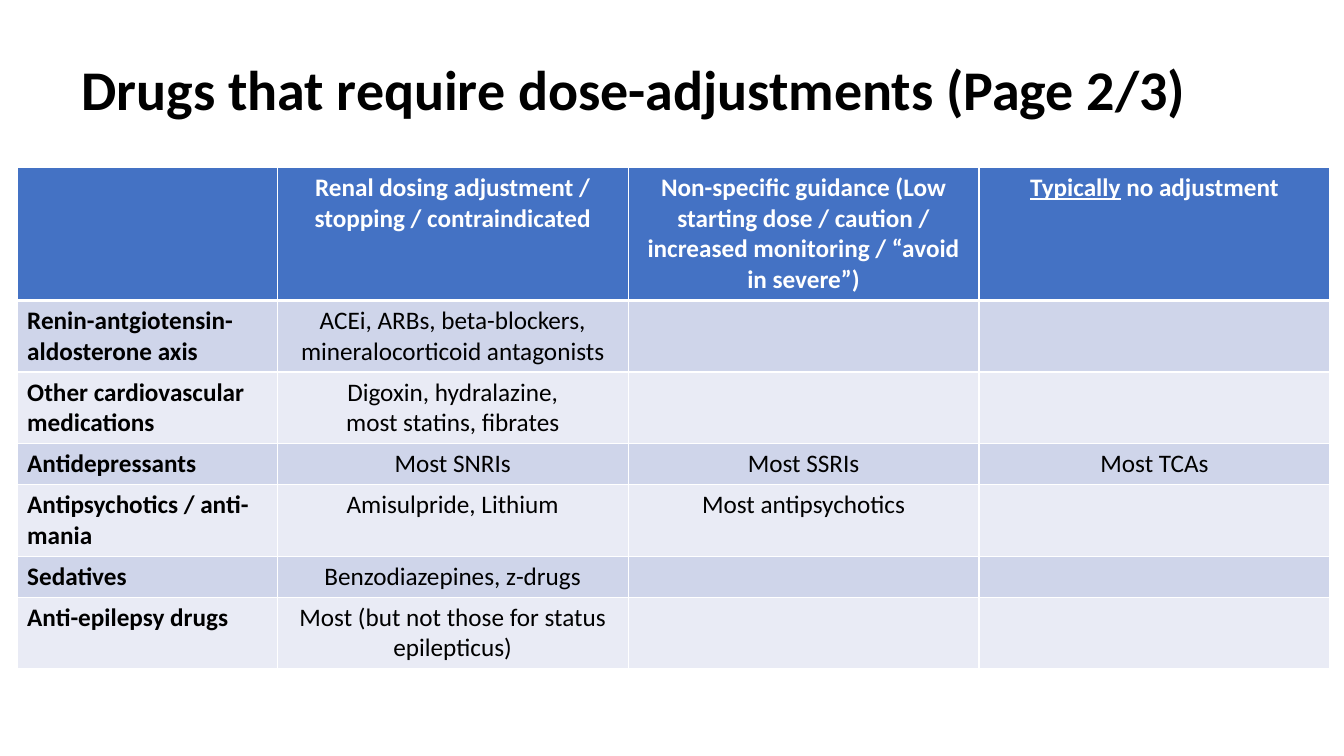
import lxml.etree
import pptx
import pptx.dml.color
import pptx.enum.text
import pptx.oxml.ns
import pptx.util

ALIGN = pptx.enum.text.PP_ALIGN
ANCHOR = pptx.enum.text.MSO_ANCHOR
WIDE, HIGH = 13.33, 7.5

HEAD = [
    "",
    "Renal dosing adjustment / stopping / contraindicated",
    "Non-specific guidance (Low starting dose / caution / "
    "increased monitoring / “avoid in severe”)",
    [("Typically", True), (" no adjustment", False)],
]
DRUGS = [
    ["Renin-antgiotensin-aldosterone axis",
     "ACEi, ARBs, beta-blockers, mineralocorticoid antagonists", "", ""],
    ["Other cardiovascular medications",
     "Digoxin, hydralazine,\nmost statins, fibrates", "", ""],
    ["Antidepressants", "Most SNRIs", "Most SSRIs", "Most TCAs"],
    ["Antipsychotics / anti-mania", "Amisulpride, Lithium",
     "Most antipsychotics", ""],
    ["Sedatives", "Benzodiazepines, z-drugs", "", ""],
    ["Anti-epilepsy drugs", "Most (but not those for status epilepticus)",
     "", ""],
]
COLS = [2.58, 3.48, 3.48, 3.48]
ROWS = [1.3, 0.7, 0.7, 0.4, 0.7, 0.4, 0.7]


def paint(code):
    return pptx.dml.color.RGBColor.from_string(code)


def write(frame, text, size=18, color="000000", bold=False,
          align=ALIGN.LEFT, lead=None):
    """Fill a frame; text is a string with line breaks or (words, underline) pairs."""
    lines = [[(line, False)] for line in text.split("\n")] \
        if isinstance(text, str) else [text]
    for i, line in enumerate(lines):
        para = frame.add_paragraph() if i else frame.paragraphs[0]
        para.alignment = align
        para.line_spacing = lead
        para.font.size = pptx.util.Pt(size)
        for words, under in line:
            if not words:
                continue
            run = para.add_run()
            run.text = words
            font = run.font
            font.name = "Calibri"
            font.size = pptx.util.Pt(size)
            font.bold = bold
            font.underline = under
            font.color.rgb = paint(color)


class Deck:
    head, bands, rule = "4472C4", ("CFD5EA", "E9EBF5"), "FFFFFF"

    def __init__(self):
        self.show = pptx.Presentation()
        self.show.slide_width = pptx.util.Inches(WIDE)
        self.show.slide_height = pptx.util.Inches(HIGH)
        self.slide = self.show.slides.add_slide(self.show.slide_layouts[5])

    def place(self, x, y, w, h):
        """Turn shares of the slide's size into lengths."""
        across, down = self.show.slide_width, self.show.slide_height
        return [round(v) for v in (x * across, y * down, w * across, h * down)]

    def title(self, text, *box):
        shape = self.slide.shapes.title
        shape.left, shape.top, shape.width, shape.height = self.place(*box)
        frame = shape.text_frame
        frame.auto_size = pptx.enum.text.MSO_AUTO_SIZE.NONE
        frame.vertical_anchor = ANCHOR.MIDDLE
        write(frame, text, size=40, bold=True, lead=0.9)

    def edge(self, cell, low):
        """Draw white borders, with the given weight for the bottom one."""
        props = cell._tc.get_or_add_tcPr()
        for side, weight in zip("LRTB", (1, 1, 1, low)):
            line = lxml.etree.SubElement(
                props, pptx.oxml.ns.qn("a:ln" + side),
                w=str(pptx.util.Pt(weight)))
            fill = lxml.etree.SubElement(line, pptx.oxml.ns.qn("a:solidFill"))
            lxml.etree.SubElement(
                fill, pptx.oxml.ns.qn("a:srgbClr"), val=self.rule)

    def table(self, data, cols, rows, *box):
        grid = self.slide.shapes.add_table(
            len(data), len(cols), *self.place(*box)).table
        for col, width in zip(grid.columns, cols):
            col.width = pptx.util.Inches(width)
        for r, (line, height) in enumerate(zip(data, rows)):
            grid.rows[r].height = pptx.util.Inches(height)
            for c, text in enumerate(line):
                cell = grid.cell(r, c)
                self.edge(cell, 1 if r else 3)
                cell.fill.solid()
                cell.fill.fore_color.rgb = paint(
                    self.bands[(r - 1) % 2] if r else self.head)
                write(cell.text_frame, text, bold=r == 0 or c == 0,
                      color="000000" if r else "FFFFFF",
                      align=ALIGN.CENTER if c else ALIGN.LEFT)


def main():
    deck = Deck()
    deck.title("Drugs that require dose-adjustments (Page 2/3)",
               0.71 / WIDE, 0.19 / HIGH, 12.47 / WIDE, 1.45 / HIGH)
    deck.table([HEAD] + DRUGS, COLS, ROWS,
               0.17 / WIDE, 1.66 / HIGH, sum(COLS) / WIDE, sum(ROWS) / HIGH)
    deck.show.save("out.pptx")


if __name__ == "__main__":
    main()
